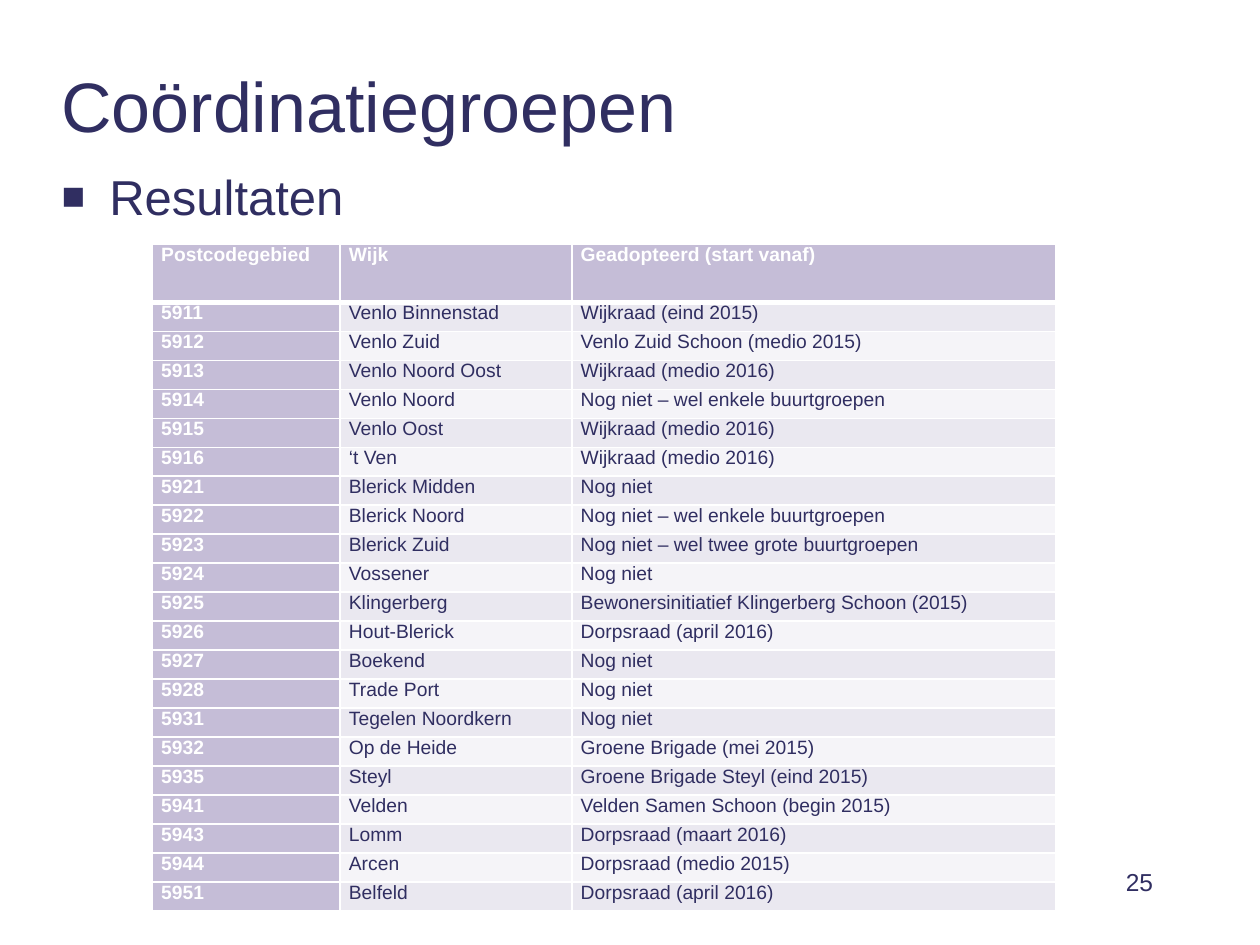
import pptx
import pptx.dml.color
import pptx.enum.text
import pptx.oxml
import pptx.oxml.ns
import pptx.util
from pptx.util import Inches

RGBColor = pptx.dml.color.RGBColor
NAVY = RGBColor(0x30, 0x2E, 0x61)
WHITE = RGBColor(0xFF, 0xFF, 0xFF)
LILAC = RGBColor(0xC5, 0xBD, 0xD7)
BANDS = (RGBColor(0xEA, 0xE8, 0xF0), RGBColor(0xF5, 0xF4, 0xF8))
ALIGN = pptx.enum.text.PP_ALIGN

COLUMN_WIDTHS = (1.49, 1.84, 3.84)
HEADER_HEIGHT, ROW_HEIGHT = 0.46, 0.23
HEADERS = ("Postcodegebied", "Wijk", "Geadopteerd (start vanaf)")
DISTRICTS = (
    ("5911", "Venlo Binnenstad", "Wijkraad (eind 2015)"),
    ("5912", "Venlo Zuid", "Venlo Zuid Schoon (medio 2015)"),
    ("5913", "Venlo Noord Oost", "Wijkraad (medio 2016)"),
    ("5914", "Venlo Noord", "Nog niet – wel enkele buurtgroepen"),
    ("5915", "Venlo Oost", "Wijkraad (medio 2016)"),
    ("5916", "‘t Ven", "Wijkraad (medio 2016)"),
    ("5921", "Blerick Midden", "Nog niet"),
    ("5922", "Blerick Noord", "Nog niet – wel enkele buurtgroepen"),
    ("5923", "Blerick Zuid", "Nog niet – wel twee grote buurtgroepen"),
    ("5924", "Vossener", "Nog niet"),
    ("5925", "Klingerberg", "Bewonersinitiatief Klingerberg Schoon (2015)"),
    ("5926", "Hout-Blerick", "Dorpsraad (april 2016)"),
    ("5927", "Boekend", "Nog niet"),
    ("5928", "Trade Port", "Nog niet"),
    ("5931", "Tegelen Noordkern", "Nog niet"),
    ("5932", "Op de Heide", "Groene Brigade (mei 2015)"),
    ("5935", "Steyl", "Groene Brigade Steyl (eind 2015)"),
    ("5941", "Velden", "Velden Samen Schoon (begin 2015)"),
    ("5943", "Lomm", "Dorpsraad (maart 2016)"),
    ("5944", "Arcen", "Dorpsraad (medio 2015)"),
    ("5951", "Belfeld", "Dorpsraad (april 2016)"),
)


def append_xml(parent, tag, content="", **attributes):
    listed = "".join(f' {name}="{value}"' for name, value in attributes.items())
    namespace = pptx.oxml.ns.nsdecls("a")
    parent.append(pptx.oxml.parse_xml(f"<a:{tag} {namespace}{listed}>{content}</a:{tag}>"))


def write(frame, text, size=11, color=NAVY, bold=False, align=ALIGN.LEFT, bullet=None):
    para = frame.paragraphs[0]
    para.alignment = align
    if bullet:
        properties = para._p.get_or_add_pPr()
        properties.set("marL", str(Inches(0.38)))
        properties.set("indent", str(Inches(-0.38)))
        append_xml(properties, "buClr", f'<a:srgbClr val="{color}"/>')
        append_xml(properties, "buSzPct", val=80000)
        append_xml(properties, "buFont", typeface="Arial")
        append_xml(properties, "buChar", char=bullet)
    span = para.add_run()
    span.text = text
    span.font.name = "Arial"
    span.font.size = pptx.util.Pt(size)
    span.font.bold = bold
    span.font.color.rgb = color


class SlideBuilder:
    def __init__(self, page):
        self.page = page

    def text(self, text, left, top, width, height, inset=0.05, **style):
        box = self.page.shapes.add_textbox(
            Inches(left), Inches(top), Inches(width), Inches(height))
        box.text_frame.word_wrap = True
        box.text_frame.margin_top = Inches(inset)
        write(box.text_frame, text, **style)

    def cell(self, cell, text, fill, top_line=1, bottom_line=1, **style):
        cell.margin_left = cell.margin_right = Inches(0.07)
        cell.margin_top = cell.margin_bottom = 0
        properties = cell._tc.get_or_add_tcPr()
        white_fill = f'<a:solidFill><a:srgbClr val="{WHITE}"/></a:solidFill>'
        for side, line in (("L", 1), ("R", 1), ("T", top_line), ("B", bottom_line)):
            append_xml(properties, f"ln{side}", white_fill, w=pptx.util.Pt(line))
        cell.fill.solid()
        cell.fill.fore_color.rgb = fill
        write(cell.text_frame, text, **style)

    def table(self, left, top):
        height = HEADER_HEIGHT + ROW_HEIGHT * len(DISTRICTS)
        table = self.page.shapes.add_table(
            len(DISTRICTS) + 1, len(HEADERS), Inches(left), Inches(top),
            Inches(sum(COLUMN_WIDTHS)), Inches(height)).table
        table.horz_banding = False
        for column, width in zip(table.columns, COLUMN_WIDTHS):
            column.width = Inches(width)
        for index, values in enumerate((HEADERS, *DISTRICTS)):
            is_header = index == 0
            table.rows[index].height = Inches(HEADER_HEIGHT if is_header else ROW_HEIGHT)
            for position, value in enumerate(values):
                is_label = is_header or position == 0
                self.cell(
                    table.cell(index, position), value,
                    fill=LILAC if is_label else BANDS[(index - 1) % 2],
                    top_line=3 if index == 1 else 1,
                    bottom_line=3 if is_header else 1,
                    color=WHITE if is_label else NAVY, bold=is_label)


def main():
    deck = pptx.Presentation()
    deck.slide_width, deck.slide_height = Inches(10), Inches(7.5)
    builder = SlideBuilder(deck.slides.add_slide(deck.slide_layouts[6]))
    builder.text("Coördinatiegroepen", 0.39, 0.39, 7.77, 1.1, inset=0.11, size=40)
    builder.text("Resultaten", 0.39, 1.23, 8.7, 5.43, inset=0.09, size=28, bullet="■")
    builder.text("25", 7.17, 6.83, 2.08, 0.5, size=14, align=ALIGN.RIGHT)
    builder.table(1.21, 1.94)
    deck.save("out.pptx")


if __name__ == "__main__":
    main()
